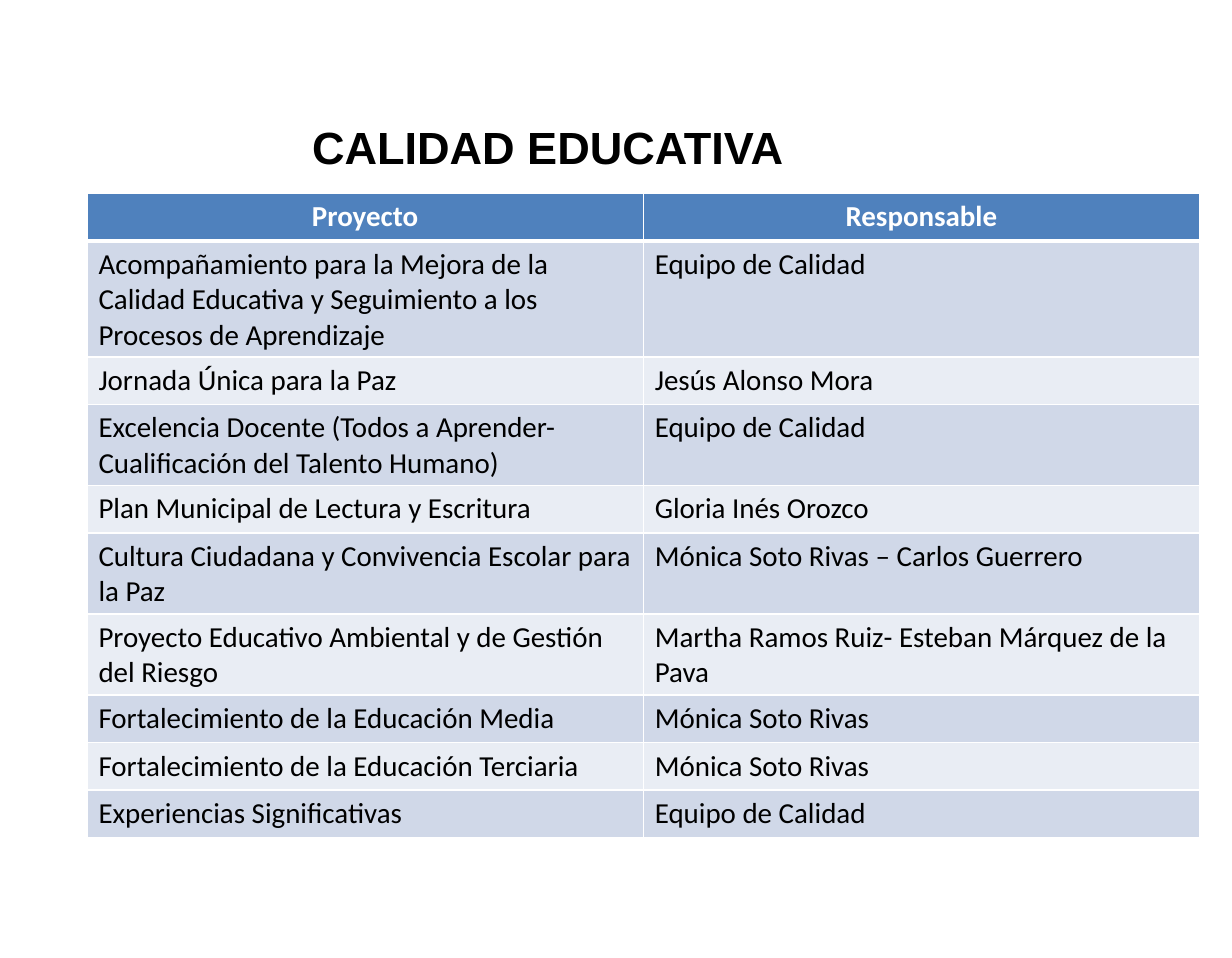
from lxml.etree import SubElement
from pptx import Presentation
from pptx.dml.color import RGBColor
from pptx.enum.text import MSO_AUTO_SIZE as AutoSize, PP_ALIGN as Align
from pptx.oxml.ns import qn
from pptx.util import Inches, Pt

BLACK, WHITE = "000000", "FFFFFF"
HEADER_FILL = "4F81BD"
BAND_FILLS = ("E9EDF4", "D0D8E8")
ROW_HEIGHT = 0.41

PROJECTS = [
    ("Proyecto", "Responsable"),
    ("Acompañamiento para la Mejora de la Calidad Educativa y Seguimiento a los "
     "Procesos de Aprendizaje", "Equipo de Calidad"),
    ("Jornada Única para la Paz", "Jesús Alonso Mora"),
    ("Excelencia Docente (Todos a Aprender- Cualificación del Talento Humano)",
     "Equipo de Calidad"),
    ("Plan Municipal de Lectura y Escritura", "Gloria Inés Orozco"),
    ("Cultura Ciudadana y Convivencia Escolar para la Paz",
     "Mónica Soto Rivas – Carlos Guerrero"),
    ("Proyecto Educativo Ambiental y de Gestión del Riesgo",
     "Martha Ramos Ruiz- Esteban Márquez de la Pava"),
    ("Fortalecimiento de la Educación Media", "Mónica Soto Rivas"),
    ("Fortalecimiento de la Educación Terciaria", "Mónica Soto Rivas"),
    ("Experiencias Significativas", "Equipo de Calidad"),
]


def color(hex_code):
    return RGBColor.from_string(hex_code)


def write_text(frame, text, size=18, font="Calibri", fill=BLACK, bold=False,
               align=Align.LEFT):
    frame.word_wrap = True
    paragraph = frame.paragraphs[0]
    paragraph.alignment = align
    run = paragraph.add_run()
    run.text = text
    run.font.size = Pt(size)
    run.font.name = font
    run.font.bold = bold
    run.font.color.rgb = color(fill)


def set_borders(cell, **widths):
    """Draw white borders; widths in points by side: L, R, T, B."""
    properties = cell._tc.get_or_add_tcPr()
    for side, width in widths.items():
        line = SubElement(properties, qn(f"a:ln{side}"), w=str(Pt(width)))
        solid = SubElement(line, qn("a:solidFill"))
        SubElement(solid, qn("a:srgbClr"), val=WHITE)


def add_title(slide, left, top, width, height):
    box = slide.shapes.add_textbox(*map(Inches, (left, top, width, height)))
    write_text(box.text_frame, "CALIDAD EDUCATIVA", size=28, font="Arial",
               bold=True, align=Align.CENTER)
    box.text_frame.auto_size = AutoSize.SHAPE_TO_FIT_TEXT


def add_project_table(slide, left, top, width):
    height = ROW_HEIGHT * len(PROJECTS)
    table = slide.shapes.add_table(
        len(PROJECTS), 2, *map(Inches, (left, top, width, height))).table
    for row_index, row in enumerate(PROJECTS):
        table.rows[row_index].height = Inches(ROW_HEIGHT)
        header = row_index == 0
        for column_index, text in enumerate(row):
            cell = table.cell(row_index, column_index)
            set_borders(cell, L=1, R=1, T=3 if row_index == 1 else 1,
                        B=3 if header else 1)
            cell.fill.solid()
            cell.fill.fore_color.rgb = color(
                HEADER_FILL if header else BAND_FILLS[row_index % 2])
            write_text(cell.text_frame, text, bold=header,
                       fill=WHITE if header else BLACK,
                       align=Align.CENTER if header else Align.LEFT)


def main():
    presentation = Presentation()
    presentation.slide_width = Inches(10.63)
    presentation.slide_height = Inches(8.27)
    slide = presentation.slides.add_slide(presentation.slide_layouts[6])
    add_title(slide, 1.38, 0.98, 6.69, 0.57)
    add_project_table(slide, 0.75, 1.67, 9.6)
    presentation.save("out.pptx")


if __name__ == "__main__":
    main()
